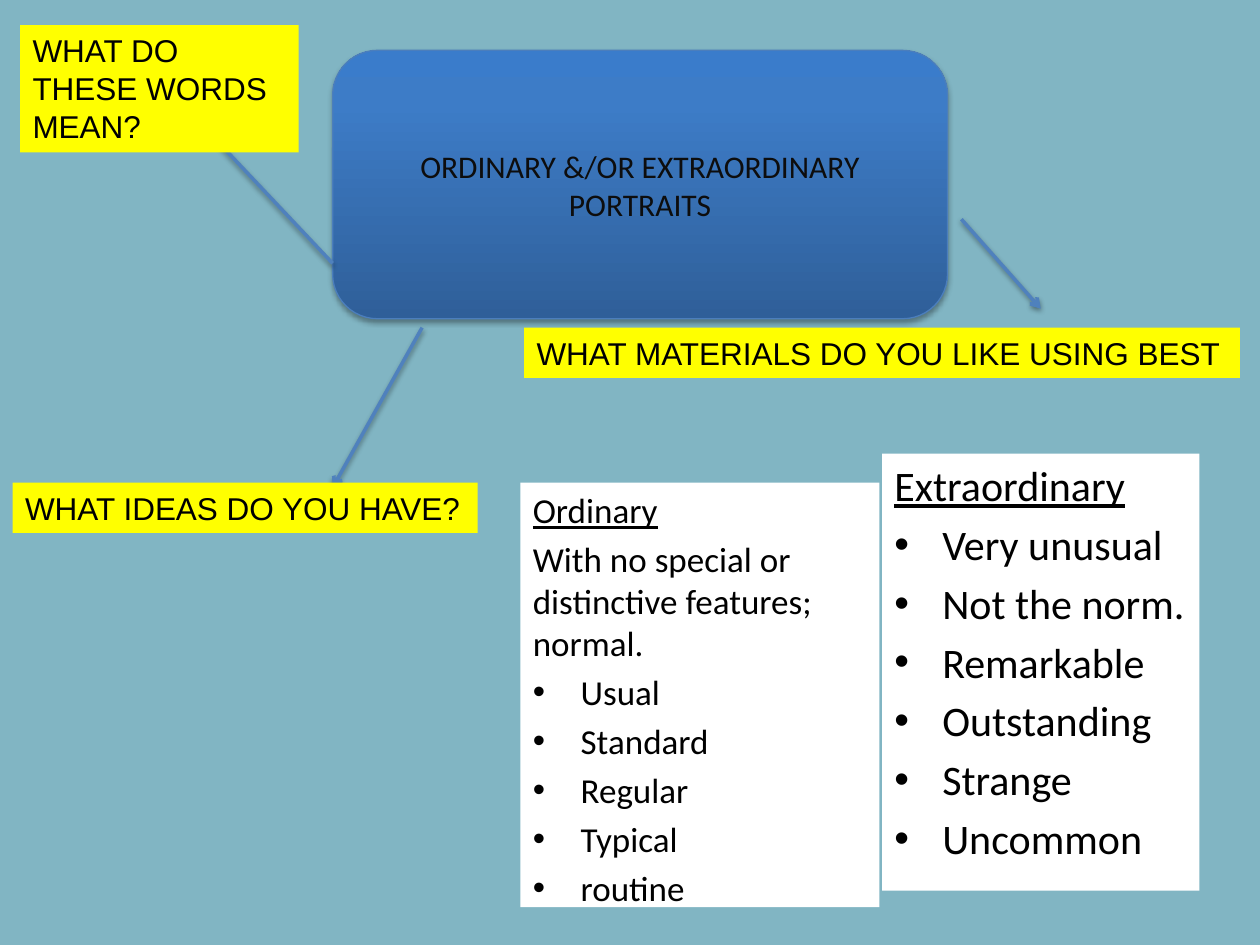
import copy

import lxml.etree
import pptx
import pptx.dml.color
import pptx.enum.shapes
import pptx.enum.text
import pptx.oxml.ns
import pptx.util

RGBColor = pptx.dml.color.RGBColor
BACKDROP = RGBColor(0x81, 0xB5, 0xC3)
TOPIC_STOPS = [
    (0, RGBColor(0x2F, 0x5F, 0x99)),
    (0.8, RGBColor(0x3D, 0x7C, 0xC7)),
    (1, RGBColor(0x3A, 0x7C, 0xCB)),
]
TOPIC_EDGE = RGBColor(0x4B, 0x7E, 0xBC)
TOPIC_TEXT = RGBColor(0x0D, 0x0D, 0x0D)
ARROW = RGBColor(0x4F, 0x81, 0xBD)
YELLOW = RGBColor(0xFF, 0xFF, 0x00)
WHITE = RGBColor(0xFF, 0xFF, 0xFF)
BLACK = RGBColor(0x00, 0x00, 0x00)

Pt = pptx.util.Pt
qn = pptx.oxml.ns.qn
SHAPE = pptx.enum.shapes.MSO_SHAPE
HANGING = pptx.util.Inches(0.38)

deck = pptx.Presentation()
deck.slide_width = pptx.util.Inches(10)
deck.slide_height = pptx.util.Inches(7.5)
COL = deck.slide_width / 100
ROW = deck.slide_height / 75

slide = deck.slides.add_slide(deck.slide_layouts[6])
slide.background.fill.solid()
slide.background.fill.fore_color.rgb = BACKDROP


def grid(col, row, *size):
    """Turn column and row counts into slide lengths."""
    cells = (col, row) + size
    return [int(n * (ROW if i % 2 else COL)) for i, n in enumerate(cells)]


def drop_shadow(properties, opacity, distance):
    """Give a shape or connector a soft black shadow straight below it."""
    effects = properties.find(qn("a:effectLst"))
    if effects is None:
        effects = lxml.etree.SubElement(properties, qn("a:effectLst"))
    shadow = lxml.etree.SubElement(
        effects, qn("a:outerShdw"), blurRad=str(Pt(3.1)), dist=str(Pt(distance)),
        dir="5400000", rotWithShape="0")
    color = lxml.etree.SubElement(shadow, qn("a:srgbClr"), val="000000")
    lxml.etree.SubElement(color, qn("a:alpha"), val=str(opacity * 1000))


# Central topic
topic = slide.shapes.add_shape(SHAPE.ROUNDED_RECTANGLE, *grid(26.4, 4, 48.8, 21.3))
topic.shadow.inherit = False
topic.fill.gradient()
topic.fill.gradient_angle = 90
stop_list = topic._element.spPr.find(qn("a:gradFill")).find(qn("a:gsLst"))
stop_list.append(copy.deepcopy(stop_list[-1]))
for stop, (position, color) in zip(topic.fill.gradient_stops, TOPIC_STOPS):
    stop.position = position
    stop.color.rgb = color
topic.line.color.rgb = TOPIC_EDGE
topic.line.width = Pt(0.75)
drop_shadow(topic._element.spPr, 35, 1.8)
topic_text = topic.text_frame
topic_text.vertical_anchor = pptx.enum.text.MSO_ANCHOR.MIDDLE
for i, wording in enumerate(["ORDINARY &/OR EXTRAORDINARY", "PORTRAITS"]):
    paragraph = topic_text.add_paragraph() if i else topic_text.paragraphs[0]
    paragraph.alignment = pptx.enum.text.PP_ALIGN.CENTER
    run = paragraph.add_run()
    run.text = wording
    run.font.name = "Calibri"
    run.font.size = Pt(18)
    run.font.color.rgb = TOPIC_TEXT

# Arrows from the topic, beneath the questions they lead to
for start, end in [
    ((26.4, 20.9), (14.5, 8.3)),
    ((33.5, 26), (26.4, 38.7)),
    ((76.3, 17.4), (82.6, 24.5)),
]:
    arrow = slide.shapes.add_connector(
        pptx.enum.shapes.MSO_CONNECTOR.STRAIGHT, *grid(*start), *grid(*end))
    arrow.line.color.rgb = ARROW
    arrow.line.width = Pt(2)
    lxml.etree.SubElement(arrow.line._get_or_add_ln(), qn("a:tailEnd"), type="arrow")
    drop_shadow(arrow._element.spPr, 38, 1.6)

# Questions
for wording, area, wraps in [
    ("WHAT DO THESE WORDS MEAN?", (1.6, 2, 22.1, 10.1), True),
    ("WHAT IDEAS DO YOU HAVE?", (1, 38.3, 36.9, 4), False),
    ("WHAT MATERIALS DO YOU LIKE USING BEST", (41.6, 26, 56.8, 4), False),
]:
    question = slide.shapes.add_textbox(*grid(*area))
    question.fill.solid()
    question.fill.fore_color.rgb = YELLOW
    question.text_frame.word_wrap = wraps
    question.text_frame.auto_size = pptx.enum.text.MSO_AUTO_SIZE.SHAPE_TO_FIT_TEXT
    run = question.text_frame.paragraphs[0].add_run()
    run.text = wording
    run.font.name = "Arial"
    run.font.size = Pt(18)
    run.font.color.rgb = BLACK

# Definitions: an underlined word, an optional meaning, then bulleted synonyms
for word, meanings, synonyms, size, area in [
    ("Ordinary", ["With no special or distinctive features; normal."],
     ["Usual", "Standard", "Regular", "Typical", "routine"],
     20, (41.3, 38.3, 28.5, 33.7)),
    ("Extraordinary", [],
     ["Very unusual", "Not the norm.", "Remarkable", "Outstanding", "Strange", "Uncommon"],
     24, (70, 36, 25.2, 34.7)),
]:
    definition = slide.shapes.add_textbox(*grid(*area))
    definition.fill.solid()
    definition.fill.fore_color.rgb = WHITE
    definition_text = definition.text_frame
    definition_text.word_wrap = True
    for i, wording in enumerate([word] + meanings + synonyms):
        paragraph = definition_text.add_paragraph() if i else definition_text.paragraphs[0]
        if i:
            paragraph.space_before = Pt(size * 0.2)
        if i > len(meanings):
            properties = paragraph._p.get_or_add_pPr()
            properties.set("marL", str(HANGING))
            properties.set("indent", str(-HANGING))
            lxml.etree.SubElement(properties, qn("a:buFont"), typeface="Arial")
            lxml.etree.SubElement(properties, qn("a:buChar"), char="•")
        run = paragraph.add_run()
        run.text = wording
        run.font.name = "Calibri"
        run.font.size = Pt(size)
        run.font.color.rgb = BLACK
        run.font.underline = i == 0

deck.save("out.pptx")
